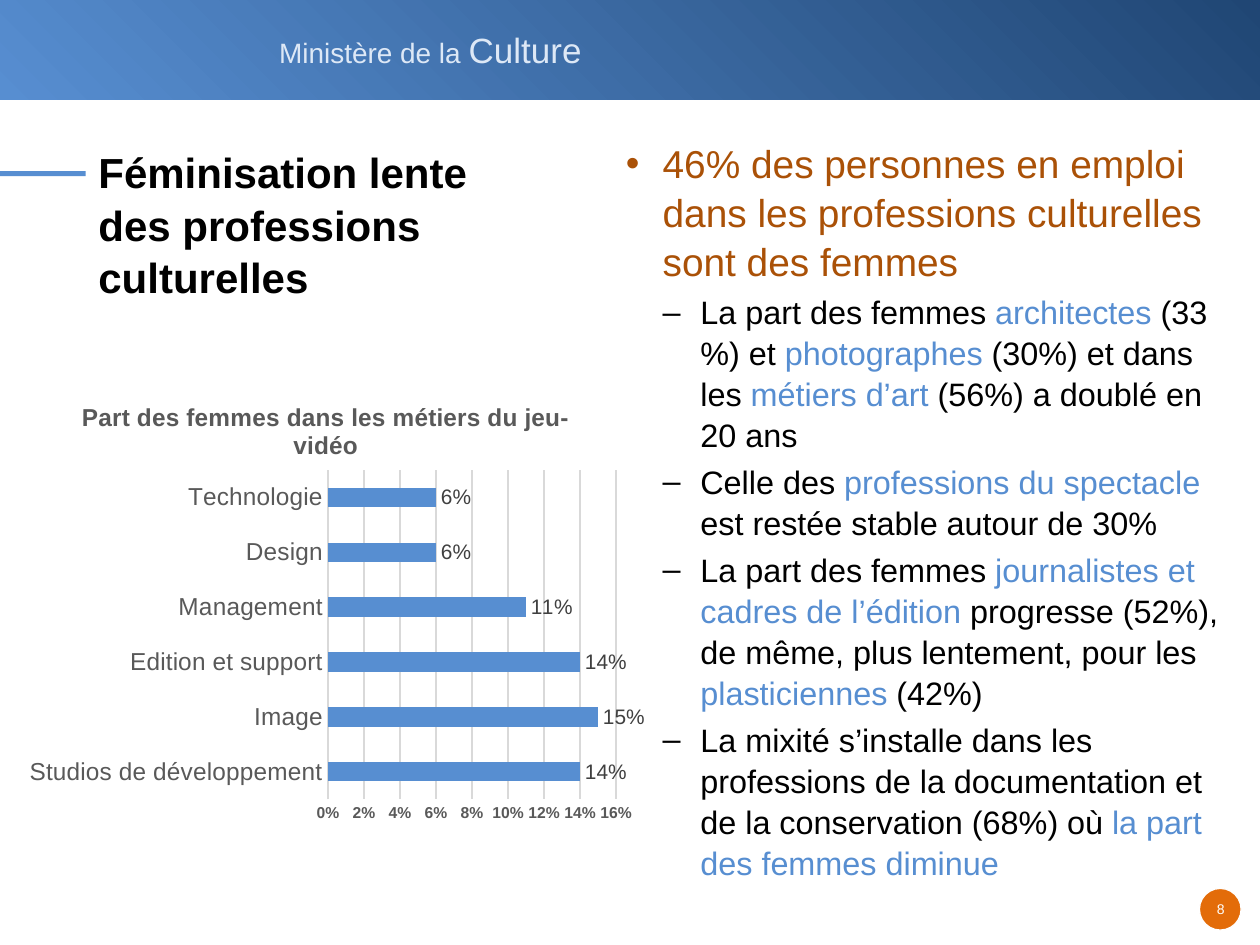
import pptx
import pptx.chart.data
import pptx.dml.color
import pptx.enum.chart
import pptx.enum.shapes
import pptx.enum.text
import pptx.oxml
import pptx.oxml.ns
import pptx.util
from lxml import etree

Cm, Pt = pptx.util.Cm, pptx.util.Pt
SHAPE = pptx.enum.shapes.MSO_SHAPE
ALIGN = pptx.enum.text.PP_ALIGN
CHART = pptx.enum.chart
qn = pptx.oxml.ns.qn

COLORS = {
    "blue": "578ED1", "navy": "204674", "pale": "DDE8F6", "orange": "E36C09",
    "rust": "AA5107", "black": "000000", "white": "FFFFFF",
    "grey": "595959", "dark": "404040", "grid": "D9D9D9",
}


def rgb(name):
    return pptx.dml.color.RGBColor.from_string(COLORS[name])


class SlideBuilder:
    font_name = "Arial"
    line_spacing = 1.05

    def __init__(self, slide):
        self.slide = slide

    def format_font(self, font, color, **values):
        for key, value in {"name": self.font_name, **values}.items():
            setattr(font, key, value)
        font.color.rgb = rgb(color)

    def format_frame(self, frame, **values):
        defaults = {"word_wrap": True, "vertical_anchor": pptx.enum.text.MSO_ANCHOR.TOP,
                    "auto_size": pptx.enum.text.MSO_AUTO_SIZE.NONE}
        for key, value in {**defaults, **values}.items():
            setattr(frame, key, value)

    def add_runs(self, paragraph, runs):
        for text, color, size in runs:
            run = paragraph.add_run()
            run.text = text
            self.format_font(run.font, color, size=Pt(size))

    def shape(self, kind, box, fill, line=None):
        shape = self.slide.shapes.add_shape(kind, *map(Cm, box))
        shape.shadow.inherit = False
        if isinstance(fill, tuple):
            shape.fill.gradient()
            shape.fill.gradient_angle = 225
            for stop, position, color in zip(shape.fill.gradient_stops, (0, 1), fill):
                stop.position = position
                stop.color.rgb = rgb(color)
        else:
            shape.fill.solid()
            shape.fill.fore_color.rgb = rgb(fill)
        if line:
            shape.line.color.rgb = rgb(line)
            shape.line.width = Pt(0.75)
        else:
            shape.line.fill.background()

    def title(self, box, text):
        title = self.slide.shapes.title
        title.left, title.top, title.width, title.height = map(Cm, box)
        self.format_frame(title.text_frame)
        title.text_frame.text = text
        paragraph = title.text_frame.paragraphs[0]
        paragraph.alignment = ALIGN.LEFT
        paragraph.line_spacing = self.line_spacing
        self.format_font(paragraph.runs[0].font, "black", size=Pt(24), bold=True)

    def text(self, box, runs, align=ALIGN.LEFT, **frame_values):
        frame = self.slide.shapes.add_textbox(*map(Cm, box)).text_frame
        self.format_frame(frame, word_wrap=False, **frame_values)
        frame.paragraphs[0].alignment = align
        self.add_runs(frame.paragraphs[0], runs)

    def bullets(self, box, items):
        frame = self.slide.shapes.add_textbox(*map(Cm, box)).text_frame
        self.format_frame(frame)
        for index, (level, runs) in enumerate(items):
            paragraph = frame.add_paragraph() if index else frame.paragraphs[0]
            paragraph.level = level
            paragraph.line_spacing = self.line_spacing
            if index:
                paragraph.space_before = Pt(3.7)
            properties = paragraph._p.get_or_add_pPr()
            properties.set("marL", str(Cm((0.74, 1.5)[level])))
            properties.set("indent", str(-Cm((0.74, 0.76)[level])))
            etree.SubElement(properties, qn("a:buFont")).set("typeface", self.font_name)
            etree.SubElement(properties, qn("a:buChar")).set("char", "•–"[level])
            self.add_runs(paragraph, runs)

    def set_layout(self, parent, after, **values):
        """Places a chart part by fractions of the chart area."""
        for old in parent.findall(qn("c:layout")):
            parent.remove(old)
        layout = etree.Element(qn("c:layout"))
        manual = etree.SubElement(layout, qn("c:manualLayout"))
        for key, value in values.items():
            etree.SubElement(manual, qn("c:" + key)).set("val", str(value))
        if after is None:
            parent.insert(0, layout)
        else:
            after.addnext(layout)

    def bar_chart(self, box, title, shares):
        data = pptx.chart.data.CategoryChartData(number_format="0%")
        data.categories = list(shares)
        data.add_series("Part des femmes", list(shares.values()))
        chart = self.slide.shapes.add_chart(
            CHART.XL_CHART_TYPE.BAR_CLUSTERED, *map(Cm, box), data).chart
        self.format_font(chart.font, "black", size=Pt(10))
        chart.has_legend = False

        # Chart title
        chart.has_title = True
        chart.chart_title.include_in_layout = False
        frame = chart.chart_title.text_frame
        frame.text = title
        self.format_font(frame.paragraphs[0].runs[0].font, "grey", size=Pt(14), bold=True)
        title_xml = chart.chart_title._element
        self.set_layout(title_xml, title_xml.find(qn("c:tx")),
                        xMode="edge", yMode="edge", x=0.1, y=0.05)

        # Bars and labels
        plot = chart.plots[0]
        plot.gap_width = 182
        plot.vary_by_categories = False
        bars = plot.series[0]
        bars.format.fill.solid()
        bars.format.fill.fore_color.rgb = rgb("blue")
        labels = bars.data_labels
        for key, value in {"show_value": True, "number_format": "0%",
                           "number_format_is_linked": False,
                           "position": CHART.XL_LABEL_POSITION.OUTSIDE_END}.items():
            setattr(labels, key, value)
        self.format_font(labels.font, "dark", size=Pt(12))

        # Axes
        jobs, scale = chart.category_axis, chart.value_axis
        for axis, size, bold in ((jobs, 14, False), (scale, 9, True)):
            axis.major_tick_mark = axis.minor_tick_mark = CHART.XL_TICK_MARK.NONE
            self.format_font(axis.tick_labels.font, "grey", size=Pt(size), bold=bold)
        for key, value in {"minimum_scale": 0, "maximum_scale": 0.16, "major_unit": 0.02,
                           "has_major_gridlines": True}.items():
            setattr(scale, key, value)
        scale.tick_labels.number_format = "0%"
        scale.tick_labels.number_format_is_linked = False
        scale.format.line.fill.background()
        for line in (jobs.format.line, scale.major_gridlines.format.line):
            line.color.rgb = rgb("grid")
            line.width = Pt(0.75)
        self.set_layout(chart._chartSpace.chart.plotArea, None, layoutTarget="inner",
                        xMode="edge", yMode="edge", x=0.5, y=0.21, w=0.46, h=0.72)


def body(*parts):
    """Second-level item whose parts alternate black and blue."""
    return 1, [(text, ("black", "blue")[i % 2], 18.5) for i, text in enumerate(parts)]


def main():
    deck = pptx.Presentation()
    deck.slide_width, deck.slide_height = Cm(25.4), Cm(19.05)
    builder = SlideBuilder(deck.slides.add_slide(deck.slide_layouts[5]))

    # Header band and accent rule
    builder.shape(SHAPE.RECTANGLE, (0, 0, 25.4, 2.01), ("navy", "blue"))
    builder.text((5.38, 0.46, 6.68, 1.12),
                 [("Ministère de la ", "pale", 16), ("Culture", "pale", 20)])
    builder.shape(SHAPE.RECTANGLE, (0, 3.45, 1.73, 0.1), "blue")

    # Page number
    builder.shape(SHAPE.OVAL, (24.18, 17.91, 0.84, 0.84), "orange", "white")
    builder.text((24.23, 18.03, 0.76, 0.58), [("8", "white", 8)], ALIGN.CENTER,
                 margin_left=Cm(0.13), margin_right=Cm(0.13),
                 margin_top=Cm(0.13), margin_bottom=Cm(0.13))

    # Title and key figures
    builder.title((1.73, 2.77, 8.36, 2.51), "Féminisation lente des professions culturelles")
    builder.bullets((12.37, 2.64, 12.5, 14.96), [
        (0, [("46% des personnes en emploi dans les professions culturelles sont des femmes",
              "rust", 22.2)]),
        body("La part des femmes ", "architectes", " (33 %) et ", "photographes",
             " (30%) et dans les ", "métiers d’art", " (56%) a doublé en 20 ans"),
        body("Celle des ", "professions du spectacle ", "est restée stable autour de 30%"),
        body("La part des femmes ", "journalistes et cadres de l’édition ",
             "progresse (52%), de même, plus lentement, pour les ", "plasticiennes", " (42%)"),
        body("La mixité s’installe dans les professions de la documentation et de la "
             "conservation (68%) où ", "la part des femmes diminue"),
    ])

    # Share of women by video game job
    builder.bar_chart((0.3, 7.54, 12.7, 9.22), "Part des femmes dans les métiers du jeu-vidéo", {
        "Studios de développement": 0.14, "Image": 0.15, "Edition et support": 0.14,
        "Management": 0.11, "Design": 0.06, "Technologie": 0.06})

    deck.save("out.pptx")


if __name__ == "__main__":
    main()
